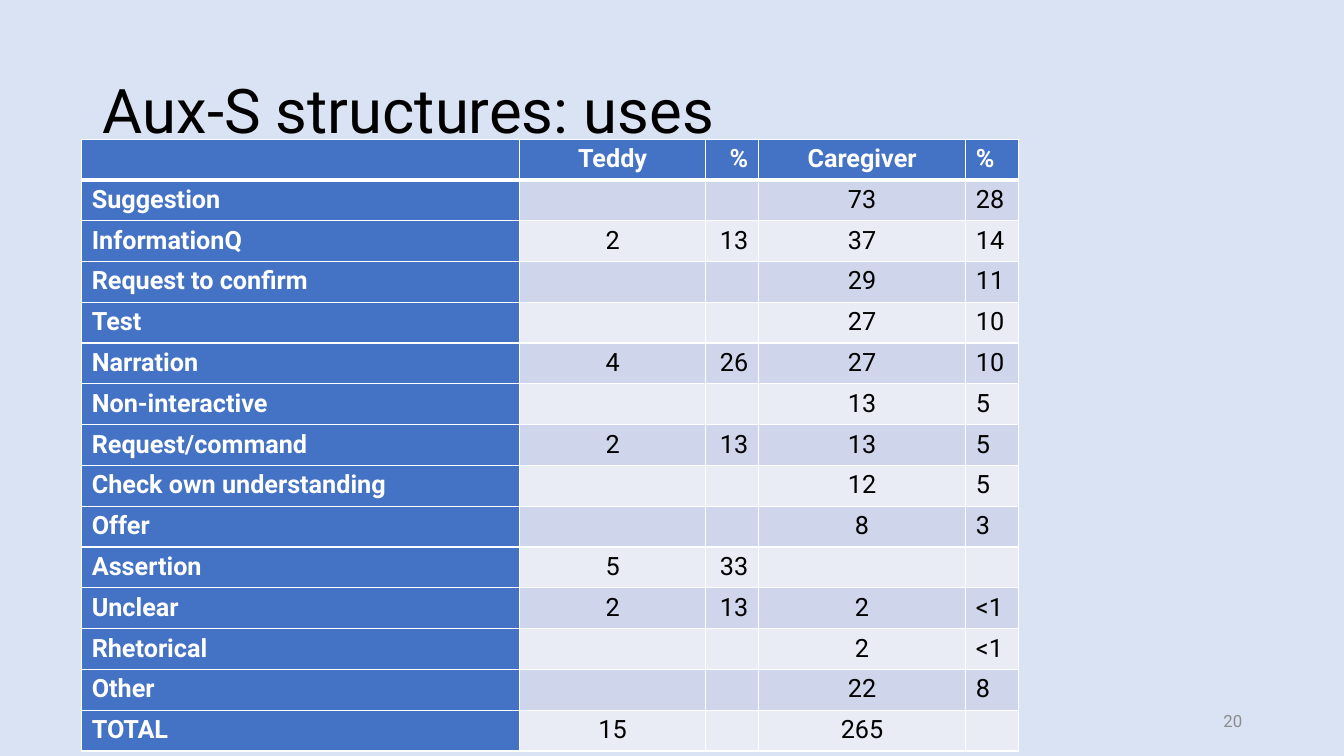
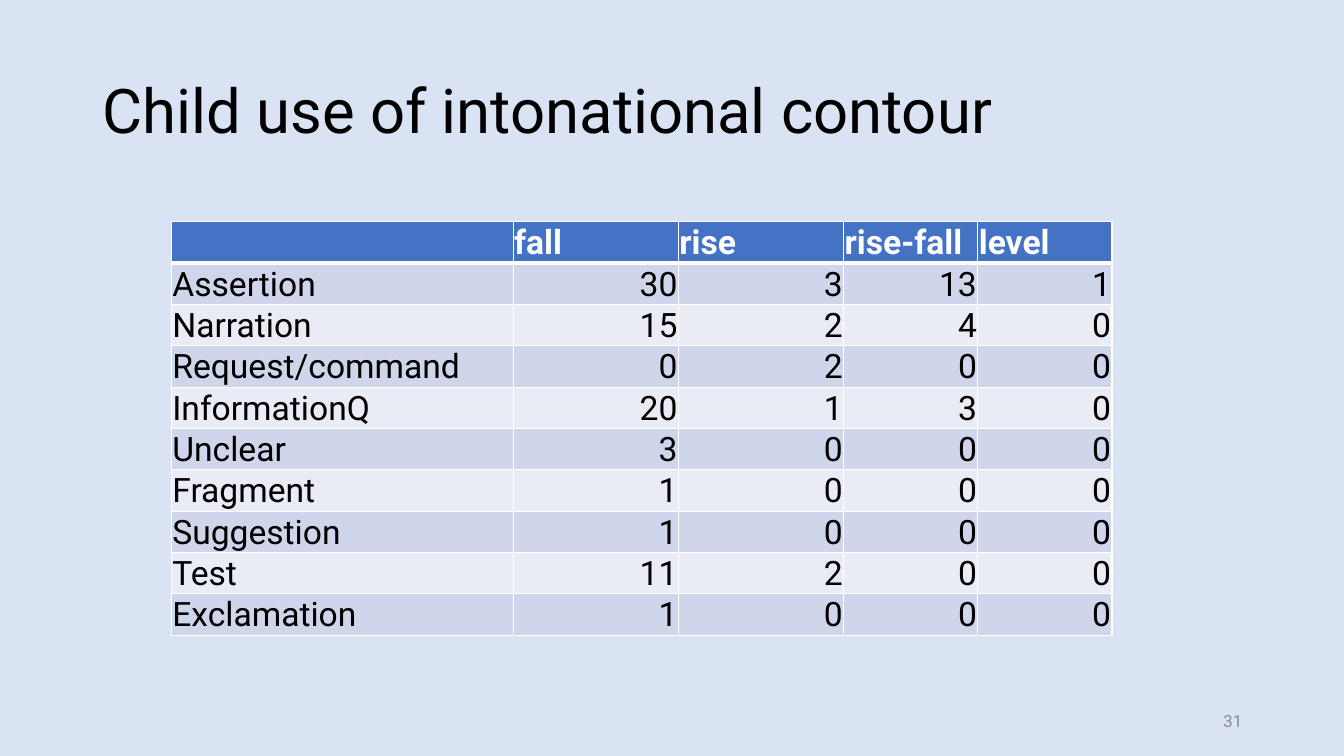
"""Build two slides of language-use tables that share one title and footer style."""
from dataclasses import dataclass

from lxml import etree
from pptx import Presentation
from pptx.dml.color import RGBColor
from pptx.enum.text import MSO_ANCHOR, PP_ALIGN
from pptx.oxml.ns import qn
from pptx.util import Emu, Inches, Pt

LEFT, CENTER, RIGHT = PP_ALIGN.LEFT, PP_ALIGN.CENTER, PP_ALIGN.RIGHT
TOP, MIDDLE, BOTTOM = MSO_ANCHOR.TOP, MSO_ANCHOR.MIDDLE, MSO_ANCHOR.BOTTOM

WIDTH, HEIGHT = Inches(13.33), Inches(7.5)
FONT = "Roboto"
BACKGROUND, HEADER = "DAE3F3", "4472C4"
BANDS = ("CFD5EA", "E9EBF5")
BLACK, WHITE, GRAY = "000000", "FFFFFF", "8C8C8C"
THIN, THICK = 1, 3


@dataclass(frozen=True)
class Area:
    """A rectangle in percent of the slide's width and height."""
    left: float
    top: float
    width: float
    height: float


@dataclass(frozen=True)
class TextStyle:
    """The look of one line of text."""
    size: int
    color: str = BLACK
    bold: bool = False
    align: PP_ALIGN = LEFT
    line_spacing: float = 1.0


@dataclass(frozen=True)
class TableSpec:
    """A table's place and column widths in percent, its style and its rows."""
    left: float
    top: float
    row_height: float
    columns: tuple[float, ...]
    size: int
    header_aligns: tuple[PP_ALIGN, ...]
    body_aligns: tuple[PP_ALIGN, ...]
    rows: tuple[tuple[str, ...], ...]
    label_column: bool = False
    tight: bool = False


@dataclass(frozen=True)
class PageSpec:
    """The content of one slide."""
    title: str
    number: str
    table: TableSpec


TITLE_AREA = Area(6.9, 5.33, 86.25, 19.33)
NUMBER_AREA = Area(70.67, 92.67, 22.5, 5.33)
TITLE_STYLE = TextStyle(44, line_spacing=0.9)
NUMBER_STYLE = TextStyle(12, GRAY, align=RIGHT)

USES_ALIGNS = (LEFT, CENTER, RIGHT, CENTER, LEFT)
USES = TableSpec(
    6.08, 18.4, 5.4, (32.56, 13.88, 3.9, 15.45, 3.9), 18, USES_ALIGNS, USES_ALIGNS,
    (
        ("", "Teddy", "%", "Caregiver", "%"),
        ("Suggestion", "", "", "73", "28"),
        ("InformationQ", "2", "13", "37", "14"),
        ("Request to confirm", "", "", "29", "11"),
        ("Test", "", "", "27", "10"),
        ("Narration", "4", "26", "27", "10"),
        ("Non-interactive", "", "", "13", "5"),
        ("Request/command", "2", "13", "13", "5"),
        ("Check own understanding", "", "", "12", "5"),
        ("Offer", "", "", "8", "3"),
        ("Assertion", "5", "33", "", ""),
        ("Unclear", "2", "13", "2", "<1"),
        ("Rhetorical", "", "", "2", "<1"),
        ("Other", "", "", "22", "8"),
        ("TOTAL", "15", "", "265", ""),
    ),
    label_column=True,
)
CONTOURS = TableSpec(
    12.75, 29.33, 5.37, (25.43, 12.3, 12.3, 9.98, 9.98), 24,
    (LEFT,) * 5, (LEFT,) + (RIGHT,) * 4,
    (
        ("", "fall", "rise", "rise-fall", "level"),
        ("Assertion", "30", "3", "13", "1"),
        ("Narration", "15", "2", "4", "0"),
        ("Request/command", "0", "2", "0", "0"),
        ("InformationQ", "20", "1", "3", "0"),
        ("Unclear", "3", "0", "0", "0"),
        ("Fragment", "1", "0", "0", "0"),
        ("Suggestion", "1", "0", "0", "0"),
        ("Test", "11", "2", "0", "0"),
        ("Exclamation", "1", "0", "0", "0"),
    ),
    tight=True,
)
PAGES = (
    PageSpec("Aux-S structures: uses", "20", USES),
    PageSpec("Child use of intonational contour", "31", CONTOURS),
)


def across(percent: float) -> Emu:
    """Return a share of the slide's width."""
    return Emu(round(WIDTH * percent / 100))


def down(percent: float) -> Emu:
    """Return a share of the slide's height."""
    return Emu(round(HEIGHT * percent / 100))


def paint(target, color: str) -> None:
    """Give a fill or a font a solid colour."""
    if hasattr(target, "solid"):
        target.solid()
        target.fore_color.rgb = RGBColor.from_string(color)
    else:
        target.color.rgb = RGBColor.from_string(color)


def write(frame, text: str, style: TextStyle) -> None:
    """Write one styled line into a text frame."""
    para = frame.paragraphs[0]
    para.alignment = style.align
    para.line_spacing = style.line_spacing
    para.font.size = Pt(style.size)
    if text:
        span = para.add_run()
        span.text = text
        span.font.name = FONT
        span.font.size = Pt(style.size)
        span.font.bold = style.bold
        paint(span.font, style.color)


def add_text(page, area: Area, text: str, style: TextStyle) -> None:
    """Add a vertically centred text box."""
    box = page.shapes.add_textbox(
        across(area.left), down(area.top), across(area.width), down(area.height))
    box.text_frame.word_wrap = True
    box.text_frame.vertical_anchor = MIDDLE
    write(box.text_frame, text, style)


def add_borders(cell, top: int, bottom: int) -> None:
    """Draw white borders round a cell, thin at the sides."""
    properties = cell._tc.get_or_add_tcPr()
    for side, points in (("L", THIN), ("R", THIN), ("T", top), ("B", bottom)):
        line = etree.SubElement(properties, qn(f"a:ln{side}"), w=str(Pt(points)))
        fill = etree.SubElement(line, qn("a:solidFill"))
        etree.SubElement(fill, qn("a:srgbClr"), val=WHITE)


def style_cell(cell, spec: TableSpec, row: int, column: int) -> None:
    """Fill, border and write one cell by its place in the table."""
    header = row == 0
    strong = header or (spec.label_column and column == 0)
    aligns = spec.header_aligns if header else spec.body_aligns
    add_borders(cell, THICK if row == 1 else THIN, THICK if header else THIN)
    paint(cell.fill, HEADER if strong else BANDS[(row - 1) % 2])
    cell.vertical_anchor = BOTTOM if spec.tight else TOP
    if spec.tight:
        cell.margin_left = cell.margin_top = cell.margin_right = Inches(0.01)
        cell.margin_bottom = 0
    style = TextStyle(spec.size, WHITE if strong else BLACK, strong, aligns[column])
    write(cell.text_frame, spec.rows[row][column], style)


def add_data_table(page, spec: TableSpec) -> None:
    """Add a table and style all its cells."""
    count = len(spec.rows)
    table = page.shapes.add_table(
        count, len(spec.columns), across(spec.left), down(spec.top),
        across(sum(spec.columns)), down(spec.row_height * count)).table
    table.first_row = table.horz_banding = False
    for column, width in enumerate(spec.columns):
        table.columns[column].width = across(width)
    for row in range(count):
        table.rows[row].height = down(spec.row_height)
        for column in range(len(spec.columns)):
            style_cell(table.cell(row, column), spec, row, column)


def main() -> None:
    """Build and save the deck."""
    deck = Presentation()
    deck.slide_width, deck.slide_height = WIDTH, HEIGHT
    paint(deck.slide_master.background.fill, BACKGROUND)
    for spec in PAGES:
        page = deck.slides.add_slide(deck.slide_layouts[6])
        add_text(page, TITLE_AREA, spec.title, TITLE_STYLE)
        add_data_table(page, spec.table)
        add_text(page, NUMBER_AREA, spec.number, NUMBER_STYLE)
    deck.save("out.pptx")


if __name__ == "__main__":
    main()
